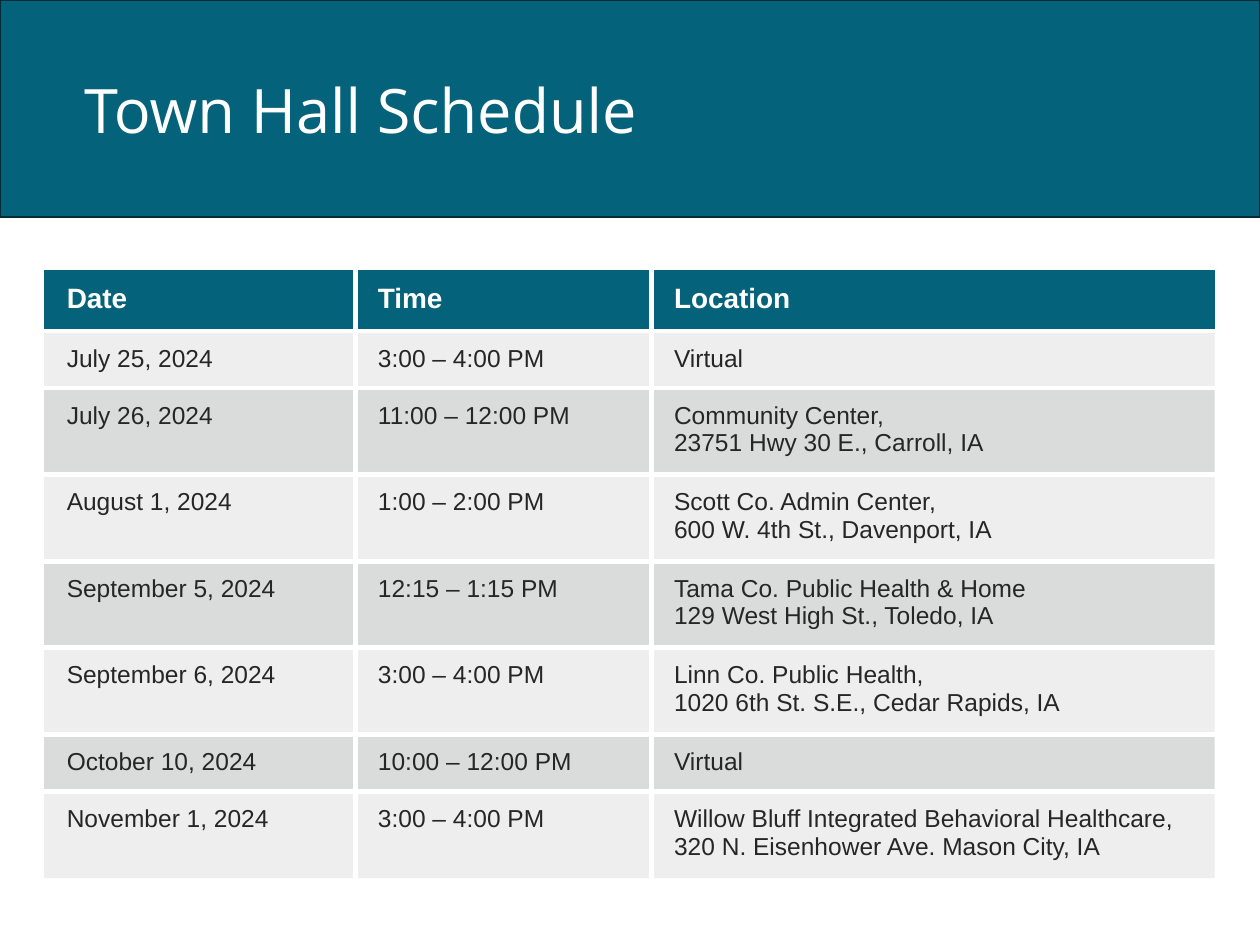
from dataclasses import dataclass

from lxml.etree import SubElement
from pptx import Presentation
from pptx.dml.color import RGBColor
from pptx.enum.shapes import MSO_SHAPE
from pptx.enum.text import MSO_ANCHOR
from pptx.oxml import parse_xml
from pptx.oxml.ns import nsdecls, qn
from pptx.slide import Slide
from pptx.table import _Cell
from pptx.util import Inches, Pt


@dataclass(frozen=True)
class Theme:
    teal: RGBColor = RGBColor(0x04, 0x62, 0x7A)
    band_edge: RGBColor = RGBColor(0x02, 0x2B, 0x35)
    gray: RGBColor = RGBColor(0x87, 0x8E, 0x8B)
    ink: RGBColor = RGBColor(0x26, 0x26, 0x26)
    white: RGBColor = RGBColor(0xFF, 0xFF, 0xFF)
    title_font: str = "Open Sans"
    table_font: str = "Arial"
    title_size: Pt = Pt(35)
    header_size: Pt = Pt(16)
    body_size: Pt = Pt(14)
    rule_width: Pt = Pt(3)
    light_opacity: int = 15
    dark_opacity: int = 30


@dataclass(frozen=True)
class Meeting:
    date: str
    time: str
    location: str
    height: float = 0.63


THEME = Theme()
SINGLE_LINE = 0.44
COLUMN_WIDTHS = (2.47, 2.35, 4.47)
HEADINGS = Meeting("Date", "Time\u00a0", "Location", SINGLE_LINE)
MEETINGS = (
    Meeting("July 25, 2024", "3:00 – 4:00 PM\u00a0", "Virtual", SINGLE_LINE),
    Meeting("July 26, 2024", "11:00 – 12:00 PM",
            "Community Center,\n23751 Hwy 30 E., Carroll, IA"),
    Meeting("August 1, 2024", "1:00 – 2:00 PM",
            "Scott Co. Admin Center,\n600 W. 4th St., Davenport, IA"),
    Meeting("September 5, 2024", "12:15 – 1:15 PM\u00a0",
            "Tama Co. Public Health & Home\v129 West High St., Toledo, IA"),
    Meeting("September 6, 2024", "3:00 – 4:00 PM",
            "Linn Co. Public Health,\n1020 6th St. S.E., Cedar Rapids, IA"),
    Meeting("October 10, 2024", "10:00 – 12:00 PM", "Virtual", SINGLE_LINE),
    Meeting("November 1, 2024", "3:00 – 4:00 PM",
            "Willow Bluff Integrated Behavioral Healthcare, "
            "320 N. Eisenhower Ave. Mason City, IA"),
)


def add_title_band(slide: Slide) -> None:
    band = slide.shapes.add_shape(
        MSO_SHAPE.RECTANGLE, 0, 0, Inches(10), Inches(1.72))
    band.shadow.inherit = False
    band.fill.solid()
    band.fill.fore_color.rgb = THEME.teal
    band.line.color.rgb = THEME.band_edge
    band.line.width = Pt(1)

    title = slide.shapes.add_textbox(
        Inches(0.57), Inches(0.27), Inches(5.79), Inches(1.27)).text_frame
    title.word_wrap = True
    title.vertical_anchor = MSO_ANCHOR.MIDDLE
    heading = title.paragraphs[0]
    heading.text = "Town Hall Schedule"
    heading.line_spacing = 0.9
    heading.font.name = THEME.title_font
    heading.font.size = THEME.title_size
    heading.font.color.rgb = THEME.white


def set_opacity(cell: _Cell, percent: int) -> None:
    color = cell.fill._xPr.find(qn("a:solidFill"))[0]
    SubElement(color, qn("a:alpha")).set("val", str(percent * 1000))


def add_inner_rules(cell: _Cell, row: int, column: int) -> None:
    """Draw a white rule on each side that meets another cell."""
    inner_sides = {
        "lnL": column > 0,
        "lnR": column < len(COLUMN_WIDTHS) - 1,
        "lnT": row > 0,
        "lnB": row < len(MEETINGS),
    }
    properties = cell._tc.get_or_add_tcPr()
    for position, (side, is_inner) in enumerate(inner_sides.items()):
        ink = (f'<a:solidFill><a:srgbClr val="{THEME.white}"/></a:solidFill>'
               if is_inner else "<a:noFill/>")
        properties.insert(position, parse_xml(
            f'<a:{side} {nsdecls("a")} w="{THEME.rule_width}">{ink}</a:{side}>'))


def fill_cell(cell: _Cell, text: str, row: int, column: int) -> None:
    is_header = row == 0
    cell.text = text
    cell.margin_left = Inches(0.18)
    cell.margin_right = cell.margin_top = cell.margin_bottom = Inches(0.11)
    for paragraph in cell.text_frame.paragraphs:
        paragraph.font.name = THEME.table_font
        paragraph.font.size = THEME.header_size if is_header else THEME.body_size
        paragraph.font.bold = is_header
        paragraph.font.color.rgb = THEME.white if is_header else THEME.ink

    cell.fill.solid()
    cell.fill.fore_color.rgb = THEME.teal if is_header else THEME.gray
    if not is_header:
        set_opacity(cell, THEME.light_opacity if row % 2 else THEME.dark_opacity)
    add_inner_rules(cell, row, column)


def add_schedule(slide: Slide) -> None:
    rows = (HEADINGS, *MEETINGS)
    schedule = slide.shapes.add_table(
        len(rows), len(COLUMN_WIDTHS), Inches(0.35), Inches(2.14),
        Inches(sum(COLUMN_WIDTHS)),
        Inches(sum(meeting.height for meeting in rows))).table
    schedule.horz_banding = False
    for column, width in enumerate(COLUMN_WIDTHS):
        schedule.columns[column].width = Inches(width)
    for row, meeting in enumerate(rows):
        schedule.rows[row].height = Inches(meeting.height)
        entries = (meeting.date, meeting.time, meeting.location)
        for column, entry in enumerate(entries):
            fill_cell(schedule.cell(row, column), entry, row, column)


def main() -> None:
    presentation = Presentation()
    presentation.slide_width = Inches(10)
    presentation.slide_height = Inches(7.5)
    slide = presentation.slides.add_slide(presentation.slide_layouts[6])
    add_title_band(slide)
    add_schedule(slide)
    presentation.save("out.pptx")


if __name__ == "__main__":
    main()
